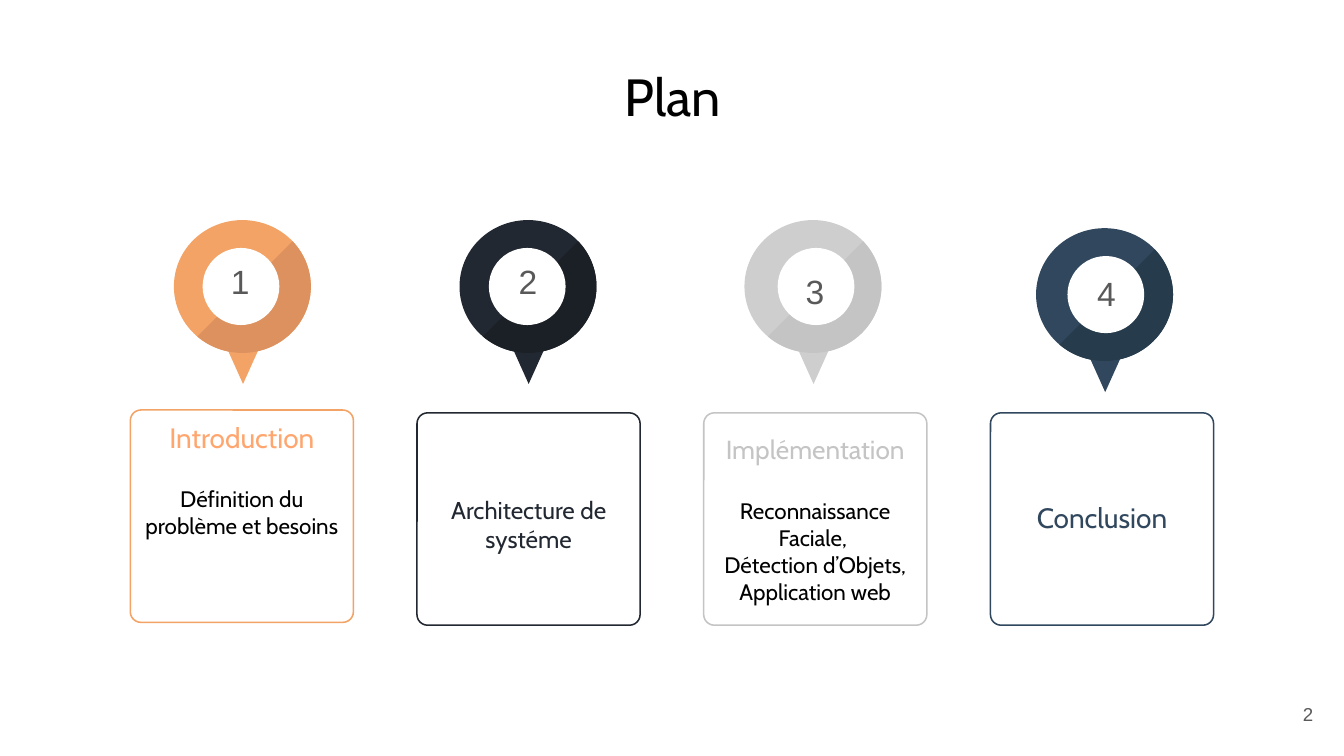
import pptx
import pptx.dml.color
import pptx.enum.shapes
import pptx.enum.text
import pptx.util
from dataclasses import dataclass

KIND = pptx.enum.shapes.MSO_SHAPE
ALIGN = pptx.enum.text.PP_ALIGN
ANCHOR = pptx.enum.text.MSO_ANCHOR


@dataclass(frozen=True)
class Theme:
    font: str = "Cabin"
    plain: str = "Arial"
    black: str = "000000"
    white: str = "FFFFFF"
    gray: str = "595959"
    title: int = 28
    digit: int = 18
    head: int = 15
    label: int = 14
    topic: int = 13
    body: int = 12
    page: int = 10
    line: float = 0.81
    inset: float = 0.1


T = Theme()

STEPS = [
    dict(fill="F2A365", shade="DD915E", edge="F2A365", pin=(19.5, 0.2), hole=21,
         digit=(32, 17), card=47, texts=[
             (-11, 48, ANCHOR.MIDDLE, T.head, "FFA66F", "Introduction"),
             (29.2, 66, ANCHOR.TOP, T.body, T.black, "Définition du problème et besoins")]),
    dict(fill="222831", shade="1B1F26", edge="222831", pin=(19, 0.2), hole=21.5,
         digit=(33.5, 17), card=47.7, texts=[
             (35.4, 34, ANCHOR.MIDDLE, T.topic, "222831", "Architecture de systéme")]),
    dict(fill="CECECE", shade="C4C4C4", edge="C4C4C4", pin=(18.2, 0.2), hole=24.3,
         digit=(35, 23), card=47.7, texts=[
             (0, 34, ANCHOR.MIDDLE, T.label, "C4C4C4", "Implémentation"),
             (33.5, 66.5, ANCHOR.TOP, T.body, T.black,
              "Reconnaissance Faciale, \nDétection d’Objets, Application web")]),
    dict(fill="30475E", shade="263C4C", edge="30475E", pin=(20.4, 2.2), hole=23,
         digit=(35, 19), card=47.7, texts=[
             (32, 34, ANCHOR.MIDDLE, T.head, "30475E", "Conclusion")]),
]


def part(box, x, y, wide, high):
    left, top, width, height = box
    return (left + x * width / 100, top + y * height / 100,
            wide * width / 100, high * height / 100)


def units(box):
    return [round(value) for value in box]


def color(code):
    return pptx.dml.color.RGBColor.from_string(code)


def shape(slide, kind, box, fill=None, edge=None):
    item = slide.shapes.add_shape(kind, *units(box))
    item.shadow.inherit = False
    if fill:
        item.fill.solid()
        item.fill.fore_color.rgb = color(fill)
    else:
        item.fill.background()
    if edge:
        item.line.color.rgb = color(edge)
        item.line.width = pptx.util.Pt(T.line)
    else:
        item.line.fill.background()
    return item


def write(item, text, size, tint, font=T.font, align=ALIGN.CENTER, anchor=ANCHOR.MIDDLE):
    frame = item.text_frame
    frame.text = text
    frame.word_wrap = True
    frame.auto_size = pptx.enum.text.MSO_AUTO_SIZE.NONE
    frame.vertical_anchor = anchor
    inset = pptx.util.Inches(T.inset)
    frame.margin_left = frame.margin_right = inset
    frame.margin_top = frame.margin_bottom = inset
    for line in frame.paragraphs:
        line.alignment = align
        for run in line.runs:
            run.font.name = font
            run.font.size = pptx.util.Pt(size)
            run.font.color.rgb = color(tint)


def label(slide, box, *args, **style):
    write(slide.shapes.add_textbox(*units(box)), *args, **style)


def title(slide, box, text):
    item = slide.shapes.title
    item.left, item.top, item.width, item.height = units(box)
    write(item, text, T.title, T.black)


def pin(slide, box, step, digit):
    shape(slide, KIND.FLOWCHART_MERGE, part(box, 36.5, 74, 28, 26), step["fill"])
    head = part(box, 0, 0, 100, 81)
    shape(slide, KIND.OVAL, head, step["fill"])
    shade = shape(slide, KIND.CHORD, head, step["shade"])
    for spot, angle in enumerate((318, 132)):
        shade.adjustments[spot] = angle * 60000 / 100000
    shape(slide, KIND.OVAL, part(box, step["hole"], 17, 56, 47), T.white)
    label(slide, part(box, *step["digit"], 103, 62), str(digit), T.digit, T.gray,
          font=T.plain, align=ALIGN.LEFT, anchor=ANCHOR.TOP)


def card(slide, box, step):
    frame = shape(slide, KIND.ROUNDED_RECTANGLE, box, edge=step["edge"])
    frame.adjustments[0] = 0.05
    for top, high, anchor, size, tint, text in step["texts"]:
        label(slide, part(box, 0, top, 100, high), text, size, tint, anchor=anchor)


def column(slide, box, step, digit):
    card(slide, part(box, 0, step["card"], 100, 52.3), step)
    pin(slide, part(box, *step["pin"], 61.4, 40.4), step, digit)


def plan(slide, box):
    title(slide, part(box, 7.8, 7.9, 84.5, 9.5), "Plan")
    pitch = 64 / (len(STEPS) - 1)
    for spot, step in enumerate(STEPS):
        column(slide, part(box, 9.7 + spot * pitch, 29, 16.6, 53.7), step, spot + 1)
    label(slide, part(box, 92.7, 90.7, 6, 7.6), "2", T.page, T.gray,
          font=T.plain, align=ALIGN.RIGHT)


def main():
    deck = pptx.Presentation()
    deck.slide_width = pptx.util.Inches(10)
    deck.slide_height = deck.slide_width * 9 // 16
    slide = deck.slides.add_slide(deck.slide_layouts.get_by_name("Title Only"))
    plan(slide, (0, 0, deck.slide_width, deck.slide_height))
    deck.save("out.pptx")


if __name__ == "__main__":
    main()
